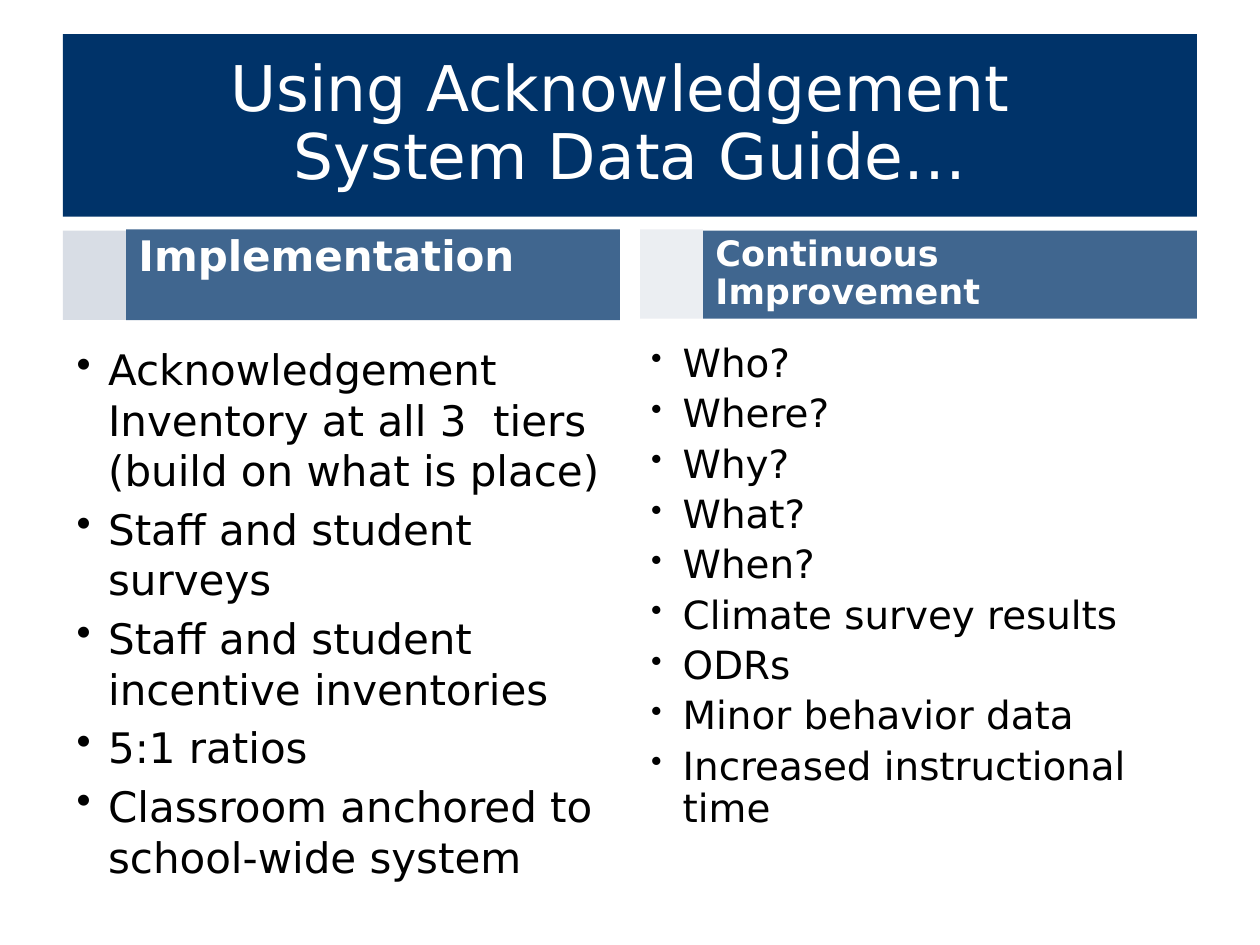
from pptx import Presentation
from pptx import util as u
from pptx.dml.color import RGBColor
from pptx.enum import shapes, text
from pptx.oxml.ns import qn
from lxml import etree

FONT = "DejaVu Sans"
NAVY, BLUE, PALE, WHITE, BLACK = "003369", "40668F", "D8DDE5", "FFFFFF", "000000"
EDGE, WIDE = 0.5, 9  # side margin and content width
TAB, HEAD = 0.5, 3.92  # widths of the pale tab and the heading

TITLE = ["Using Acknowledgement ", "System Data Guide…"]
COLS = [
    dict(head="Implementation", size=24, top=1.82, high=0.72, before=4.8, hang=0.38,
         tab=1.83, alpha=None,
         left=0.51, tall=4.41, pt=24, line=None, dot=100,
         items=["Acknowledgement Inventory at all 3\u00a0 tiers (build on what is place)",
                "Staff and student surveys",
                "Staff and student incentive inventories",
                "5:1 ratios",
                "Classroom anchored to school-wide system"]),
    dict(head="Continuous Improvement", size=20, top=1.83, high=0.7, before=0, hang=0,
         tab=1.82, alpha=49,
         left=5.07, tall=4.02, pt=22.2, line=0.9, dot=81,
         items=["Who?", "Where?", "Why?", "What?", "When?", "Climate survey results",
                "ODRs", "Minor behavior data", "Increased instructional time"]),
]

deck = Presentation()
deck.slide_width, deck.slide_height = u.Inches(10), u.Inches(7.5)
slide = deck.slides.add_slide(deck.slide_layouts[6])


def color(code):
    return RGBColor.from_string(code)


def setup(frame, anchor=text.MSO_ANCHOR.TOP):
    frame.word_wrap = True
    frame.vertical_anchor = anchor
    return frame


def bar(x, y, w, h, fill, alpha=None):
    box = slide.shapes.add_shape(shapes.MSO_SHAPE.RECTANGLE, *map(u.Inches, (x, y, w, h)))
    box.shadow.inherit = False
    box.fill.solid()
    box.fill.fore_color.rgb = color(fill)
    box.line.fill.background()
    if alpha:
        tint = box.fill._xPr.find(".//" + qn("a:srgbClr"))
        etree.SubElement(tint, qn("a:alpha"), val=str(alpha * 1000))
    return box


def write(para, words, size, ink, bold=False):
    run = para.add_run()
    run.text = words
    run.font.name, run.font.size = FONT, u.Pt(size)
    run.font.bold = bold
    run.font.color.rgb = color(ink)


def indent(para, hang):
    props = para._p.get_or_add_pPr()
    props.set("marL", str(u.Inches(hang)))
    props.set("indent", str(-u.Inches(hang)))
    return props


def bullet(para, dot):
    props = indent(para, 0.25)
    tone = etree.SubElement(props, qn("a:buClr"))
    etree.SubElement(tone, qn("a:srgbClr"), val=BLACK)
    etree.SubElement(props, qn("a:buSzPct"), val=str(dot * 1000))
    etree.SubElement(props, qn("a:buChar"), char="•")


# Title band
band = setup(bar(EDGE, 0.27, WIDE, 1.45, NAVY).text_frame, text.MSO_ANCHOR.MIDDLE)
para = band.paragraphs[0]
para.alignment, para.line_spacing = text.PP_ALIGN.CENTER, 0.9
for n, words in enumerate(TITLE):
    if n:
        para.add_line_break()
    write(para, words, 36, WHITE)

# Two columns, flush with the two ends of the title band
step = WIDE - TAB - HEAD
for n, col in enumerate(COLS):
    x = EDGE + n * step

    # Pale tab and heading
    bar(x, col["tab"], TAB, 0.71, PALE, col["alpha"])
    head = bar(x + TAB, col["top"], HEAD, col["high"], BLUE)
    para = setup(head.text_frame).paragraphs[0]
    para.alignment, para.line_spacing = text.PP_ALIGN.LEFT, 0.9
    para.space_before = u.Pt(col["before"])
    indent(para, col["hang"])
    write(para, col["head"], col["size"], WHITE, True)

    # Bulleted list
    area = map(u.Inches, (col["left"], 2.68, TAB + HEAD, col["tall"]))
    frame = setup(slide.shapes.add_textbox(*area).text_frame)
    for i, words in enumerate(col["items"]):
        para = frame.add_paragraph() if i else frame.paragraphs[0]
        para.line_spacing = col["line"]
        para.space_before = u.Pt(4.8 if i else 0)
        bullet(para, col["dot"])
        write(para, words, col["pt"], BLACK)

deck.save("out.pptx")
